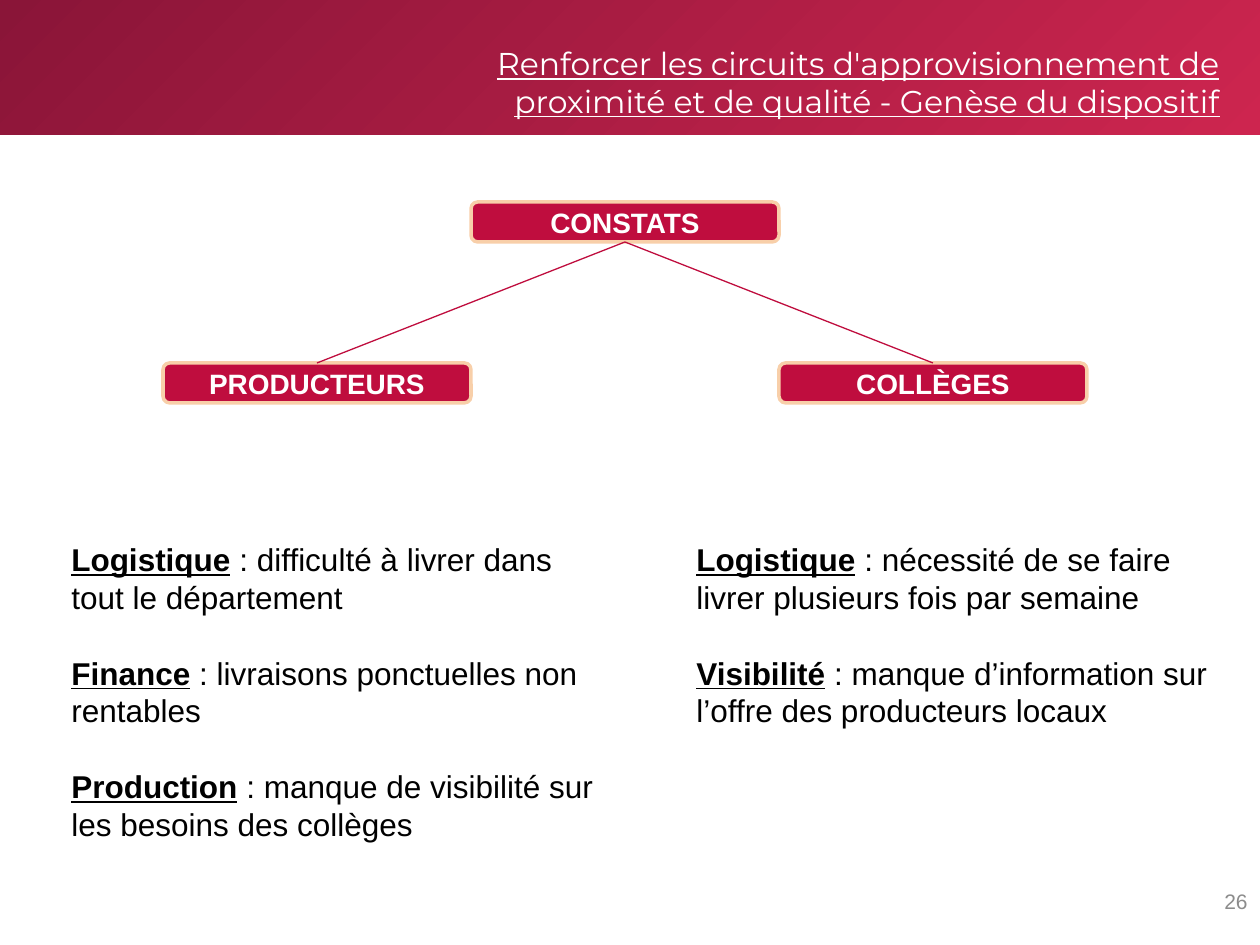
from lxml.etree import SubElement
from pptx import Presentation
from pptx.dml.color import RGBColor
from pptx.enum.shapes import MSO_CONNECTOR, MSO_SHAPE
from pptx.enum.text import MSO_ANCHOR, PP_ALIGN
from pptx.oxml.ns import qn
from pptx.util import Emu, Pt

EMU_PER_PX = 914400 // 126
COLORS = {
    "dark": "8A1538", "light": "CD254F", "red": "BF0D3E", "peach": "F8CFA9",
    "white": "FFFFFF", "black": "000000", "grey": "8C8C8C",
}
BOX_WIDTH, BOX_HEIGHT = 308, 40
CENTER = 625
LINE_HEIGHT = Pt(21.6)

PRODUCER_FINDINGS = [
    ("Logistique", " : difficulté à livrer dans tout le département"),
    ("Finance", " : livraisons ponctuelles non rentables"),
    ("Production", " : manque de visibilité sur les besoins des collèges"),
]
COLLEGE_FINDINGS = [
    ("Logistique", " : nécessité de se faire livrer plusieurs fois par semaine"),
    ("Visibilité", " : manque d’information sur l’offre des producteurs locaux"),
]


def px(*lengths):
    return [Emu(length * EMU_PER_PX) for length in lengths]


def color(name):
    return RGBColor.from_string(COLORS[name])


def write(para, text, size=18, font="Arial", ink="black", bold=False, underline=False):
    span = para.add_run()
    span.text = text
    span.font.size = Pt(size)
    span.font.name = font
    span.font.color.rgb = color(ink)
    span.font.bold = bold
    span.font.underline = underline


def add_text_frame(page, left, top, width, height):
    frame = page.shapes.add_textbox(*px(left, top, width, height)).text_frame
    frame.word_wrap = True
    return frame


def add_banner(page):
    banner = page.shapes.add_shape(MSO_SHAPE.RECTANGLE, *px(0, 0, 1260, 135))
    banner.shadow.inherit = False
    banner.line.fill.background()
    banner.fill.gradient()
    banner.fill.gradient_angle = 315
    for stop, name, position in zip(banner.fill.gradient_stops, ("dark", "light"), (0, 1)):
        stop.color.rgb = color(name)
        stop.position = position


def add_title(page, text):
    para = add_text_frame(page, 408, 38, 824, 82).paragraphs[0]
    para.alignment = PP_ALIGN.RIGHT
    write(para, text, font="Montserrat", ink="white", underline=True)


def add_page_number(page, number):
    frame = add_text_frame(page, 966, 876, 294, 50)
    frame.vertical_anchor = MSO_ANCHOR.MIDDLE
    frame.paragraphs[0].alignment = PP_ALIGN.RIGHT
    write(frame.paragraphs[0], number, size=12, ink="grey")


def add_findings(page, left, height, findings):
    frame = add_text_frame(page, left, 534, 551, height)
    for index, (label, detail) in enumerate(findings):
        para = frame.add_paragraph() if index else frame.paragraphs[0]
        para.line_spacing = LINE_HEIGHT
        if index:
            para.space_before = LINE_HEIGHT
        write(para, label, bold=True, underline=True)
        write(para, detail)


def add_node(page, center, top, text):
    box = page.shapes.add_shape(
        MSO_SHAPE.ROUNDED_RECTANGLE,
        *px(center - BOX_WIDTH // 2, top, BOX_WIDTH, BOX_HEIGHT))
    box.shadow.inherit = False
    box.fill.solid()
    box.fill.fore_color.rgb = color("red")
    box.line.color.rgb = color("peach")
    box.line.width = Pt(2)
    box.text_frame.vertical_anchor = MSO_ANCHOR.MIDDLE
    para = box.text_frame.paragraphs[0]
    para.alignment = PP_ALIGN.CENTER
    write(para, text, size=16, ink="white", bold=True)
    return box


def add_branch(page, parent, child):
    """Draw a line from the bottom of the parent to the top of the child."""
    branch = page.shapes.add_connector(MSO_CONNECTOR.STRAIGHT, 0, 0, 0, 0)
    branch.begin_connect(parent, 2)
    branch.end_connect(child, 0)
    branch.line.color.rgb = color("red")
    branch.line.width = Pt(0.75)
    SubElement(branch._element.spPr, qn("a:effectLst"))


def main():
    deck = Presentation()
    deck.slide_width, deck.slide_height = px(1260, 945)
    page = deck.slides.add_slide(deck.slide_layouts[6])
    add_banner(page)
    add_page_number(page, "26")
    add_title(page, "Renforcer les circuits d'approvisionnement de proximité "
                    "et de qualité - Genèse du dispositif")
    add_findings(page, 59, 318, PRODUCER_FINDINGS)
    add_findings(page, 684, 204, COLLEGE_FINDINGS)
    root = add_node(page, CENTER, 202, "CONSTATS")
    for side, text in ((-1, "PRODUCTEURS"), (1, "COLLÈGES")):
        child = add_node(page, CENTER + side * BOX_WIDTH, 363, text)
        add_branch(page, root, child)
    deck.save("out.pptx")


if __name__ == "__main__":
    main()
